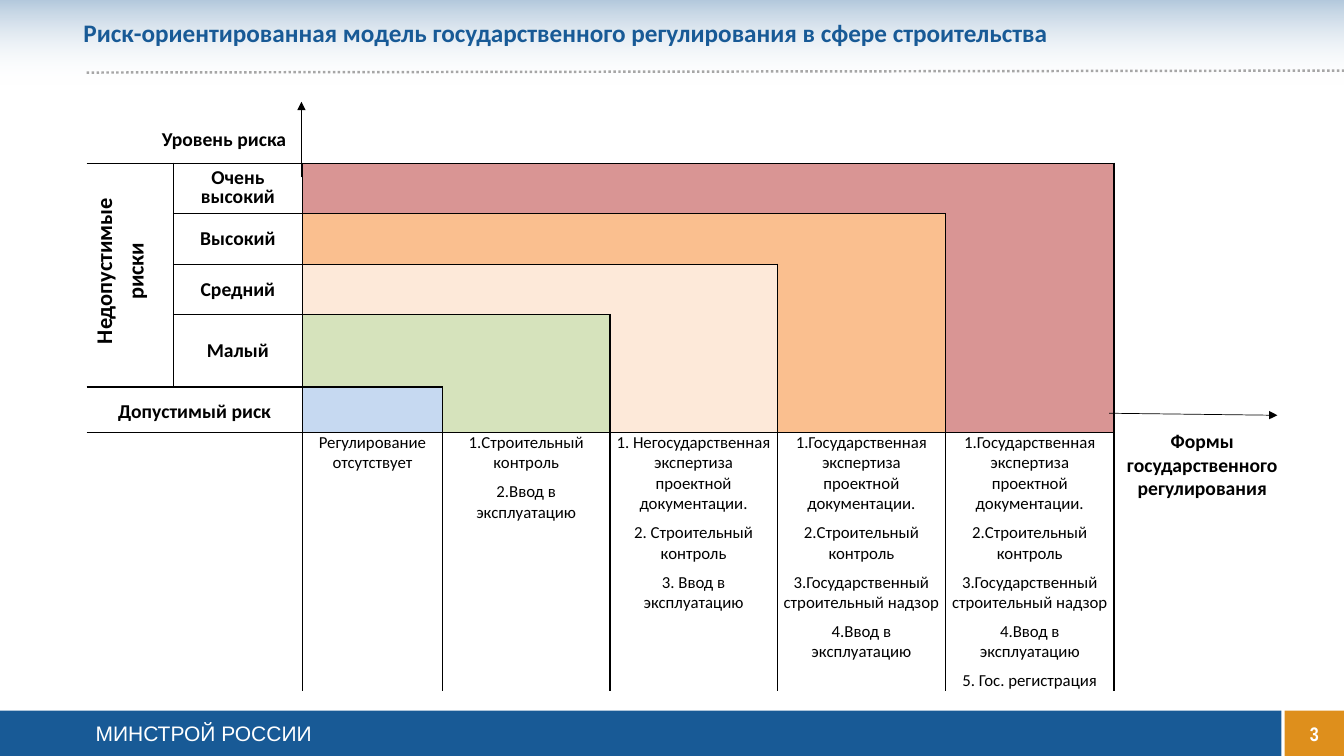
from itertools import accumulate
from lxml.etree import SubElement
from pptx import Presentation
from pptx.dml.color import RGBColor
from pptx.enum.dml import MSO_LINE
from pptx.enum.shapes import MSO_CONNECTOR, MSO_SHAPE
from pptx.enum.text import MSO_ANCHOR, PP_ALIGN
from pptx.oxml import parse_xml
from pptx.oxml.ns import nsdecls, qn
from pptx.util import Inches, Pt

THEME = {
    "blue": "185A96", "orange": "DE8F1C", "white": "FFFFFF", "black": "000000", "dots": "A6A6A6",
    "bands": ["D99594", "FABF8F", "FDE9D9", "D6E3BC", "C6D9F1"],
    "title": 18, "side": 16, "footer": 15, "label": 14, "list": 12,
}

# Slide and table grid
WIDTH, HEIGHT = 13.33, 7.5
COLUMNS = [0.86, 1.28, 1.39, 1.66, 1.66, 1.67, 1.67, 1.28]
ROWS = [0.5, 0.5, 0.5, 0.5, 0.72, 0.45, 2.53]
xs = list(accumulate([0.86] + COLUMNS))
ys = list(accumulate([1.12] + ROWS))
FOOTER_TOP = HEIGHT * 0.94
NUMBER_LEFT = WIDTH - 0.59

deck = Presentation()
deck.slide_width, deck.slide_height = Inches(WIDTH), Inches(HEIGHT)
page = deck.slides.add_slide(deck.slide_layouts[6])


def write(frame, lines, size, color="black", bold=True, align=PP_ALIGN.CENTER,
          spacing=None, before=0, font="Calibri"):
    for number, line in enumerate(lines):
        para = frame.add_paragraph() if number else frame.paragraphs[0]
        para.alignment = align
        if spacing:
            para.line_spacing = spacing
        if number and before:
            para.space_before = Pt(before)
        span = para.add_run()
        span.text = line
        span.font.size, span.font.bold, span.font.name = Pt(THEME[size]), bold, font
        span.font.color.rgb = RGBColor.from_string(THEME[color])


# Footer bars and header gradient
panels = [
    (NUMBER_LEFT, FOOTER_TOP, WIDTH - NUMBER_LEFT, HEIGHT - FOOTER_TOP, "orange"),
    (0, FOOTER_TOP, NUMBER_LEFT - 0.03, HEIGHT - FOOTER_TOP, "blue"),
    (0, 0, WIDTH, 0.85, None),
]
for left, top, width, height, color in panels:
    panel = page.shapes.add_shape(MSO_SHAPE.RECTANGLE, Inches(left), Inches(top),
                                  Inches(width), Inches(height))
    panel.shadow.inherit = False
    panel.line.fill.background()
    if color:
        panel.fill.solid()
        panel.fill.fore_color.rgb = RGBColor.from_string(THEME[color])
        continue
    panel.fill.gradient()
    panel.fill.gradient_angle = 90
    for stop, name in zip(panel.fill.gradient_stops, ("white", "blue")):
        stop.color.rgb = RGBColor.from_string(THEME[name])
    for tone, alpha in zip(panel._element.spPr.iter(qn("a:srgbClr")), (0, 34)):
        SubElement(tone, qn("a:alpha")).set("val", str(alpha * 1000))

# Risk table
table_frame = page.shapes.add_table(len(ROWS), len(COLUMNS), Inches(xs[0]), Inches(ys[0]),
                                    Inches(sum(COLUMNS)), Inches(sum(ROWS)))
table = table_frame.table
table.first_row = table.horz_banding = False
style = table._tbl.tblPr.find(qn("a:tableStyleId"))
style.text = "{2D5ABB26-0587-4C30-8999-92F81FD0307C}"
for column, width in zip(table.columns, COLUMNS):
    column.width = Inches(width)
for row, height in zip(table.rows, ROWS):
    row.height = Inches(height)
merges = [((0, 0), (0, 1)), ((1, 0), (4, 0)), ((5, 0), (5, 1)), ((6, 0), (6, 1))]
for first, last in merges:
    table.cell(*first).merge(table.cell(*last))

# Cell borders, shared by the neighbours on both sides
edges = {(r, c): set() for r in range(len(ROWS)) for c in range(len(COLUMNS))}
for r in range(1, 7):
    for c in range(7):
        if (r in (1, 5, 6)) if c == 0 else (r == 6 or r <= 7 - c):
            edges[r, c].add("T")
            edges[r - 1, c].add("B")
        if r < 5 if c == 0 else (c == 1 or r >= 7 - c):
            edges[r, c].add("R")
            edges[r, c + 1].add("L")
for first, last in merges:
    edges[first] |= edges[last]

# Nested bands: each is one row high and one column wide
INK = f'<a:solidFill><a:srgbClr val="{THEME["black"]}"/></a:solidFill>'
for (r, c), sides in edges.items():
    cell = table.cell(r, c)
    cell.margin_left = cell.margin_right = Inches(0.06)
    cell.margin_top = cell.margin_bottom = 0
    if 1 <= r <= 5 and 2 <= c <= 6:
        cell.fill.solid()
        cell.fill.fore_color.rgb = RGBColor.from_string(THEME["bands"][min(r, 7 - c) - 1])
    else:
        cell.fill.background()
    for place, side in enumerate("LRTB"):
        paint = INK if side in sides else "<a:noFill/>"
        cell._tc.get_or_add_tcPr().insert(place, parse_xml(
            f'<a:ln{side} {nsdecls("a")} w="12700">{paint}</a:ln{side}>'))

# Risk levels
levels = [
    (0, 0, "Уровень риска", "label", PP_ALIGN.RIGHT, 1.15),
    (1, 0, "Недопустимые риски", "side", PP_ALIGN.CENTER, 1.15),
    (1, 1, "Очень высокий", "label", PP_ALIGN.CENTER, 0.8),
    (2, 1, "Высокий", "label", PP_ALIGN.CENTER, None),
    (3, 1, "Средний", "label", PP_ALIGN.CENTER, None),
    (4, 1, "Малый", "label", PP_ALIGN.CENTER, None),
    (5, 0, "Допустимый риск", "label", PP_ALIGN.CENTER, 1.15),
]
for r, c, label, size, align, spacing in levels:
    cell = table.cell(r, c)
    cell.vertical_anchor = MSO_ANCHOR.MIDDLE
    write(cell.text_frame, [label], size, align=align, spacing=spacing)
table.cell(0, 0).margin_right = Inches(0.16)
side_cell = table.cell(1, 0)
side_cell.vertical_anchor = MSO_ANCHOR.TOP
side_cell._tc.get_or_add_tcPr().set("vert", "vert270")
side_para = side_cell.text_frame.paragraphs[0]
side_para._p.get_or_add_pPr().set("marL", str(Inches(0.08)))

# Forms of regulation
STATE_CONTROL = ["1.Государственная экспертиза проектной документации.",
                 "2.Строительный контроль",
                 "3.Государственный строительный надзор", "4.Ввод в эксплуатацию"]
measures = [
    ["Регулирование отсутствует"],
    ["1.Строительный контроль", "2.Ввод в эксплуатацию"],
    ["1. Негосударственная экспертиза проектной документации.",
     "2. Строительный контроль", "3. Ввод в эксплуатацию"],
    STATE_CONTROL,
    STATE_CONTROL + ["5. Гос. регистрация"],
]
for c, lines in enumerate(measures, 2):
    write(table.cell(6, c).text_frame, lines, "list", bold=False, before=6)

# Axes and dotted rule
rules = [
    (xs[7] - 0.05, 4.1, 12.67, 4.12, "black", 0.5, True),
    (xs[2] - 0.01, 1.76, xs[2] - 0.01, 1.01, "black", 0.5, True),
    (xs[0], 0.72, WIDTH, 0.7, "dots", 1.75, False),
]
for x1, y1, x2, y2, color, weight, arrow in rules:
    rule = page.shapes.add_connector(MSO_CONNECTOR.STRAIGHT, Inches(x1), Inches(y1),
                                     Inches(x2), Inches(y2))
    rule.line.color.rgb = RGBColor.from_string(THEME[color])
    rule.line.width = Pt(weight)
    if arrow:
        SubElement(rule.line._get_or_add_ln(), qn("a:tailEnd")).set("type", "triangle")
    else:
        rule.line.dash_style = MSO_LINE.ROUND_DOT
    SubElement(rule._element.spPr, qn("a:effectLst"))

# Title, axis name, footer and page number
LEFT, TOP, MIDDLE = PP_ALIGN.LEFT, MSO_ANCHOR.TOP, MSO_ANCHOR.MIDDLE
texts = [
    (0.73, 0, 12.54, 0.69, MIDDLE,
     ["Риск-ориентированная модель государственного регулирования в сфере строительства"],
     dict(size="title", color="blue", align=LEFT, spacing=0.9)),
    (xs[7], 4.21, 1.75, 0.81, TOP, ["Формы", "государственного", "регулирования"],
     dict(size="label")),
    (0.85, FOOTER_TOP + 0.05, 9.13, 0.35, TOP, ["МИНСТРОЙ РОССИИ"],
     dict(size="footer", color="white", bold=False, align=LEFT, font="Arial")),
    (NUMBER_LEFT, FOOTER_TOP + 0.01, 0.59, 0.44, MIDDLE, ["3"],
     dict(size="label", color="white", font="Arial Narrow")),
]
for left, top, width, height, anchor, lines, look in texts:
    box = page.shapes.add_textbox(Inches(left), Inches(top), Inches(width), Inches(height))
    box.text_frame.word_wrap = True
    box.text_frame.vertical_anchor = anchor
    write(box.text_frame, lines, **look)

deck.save("out.pptx")
